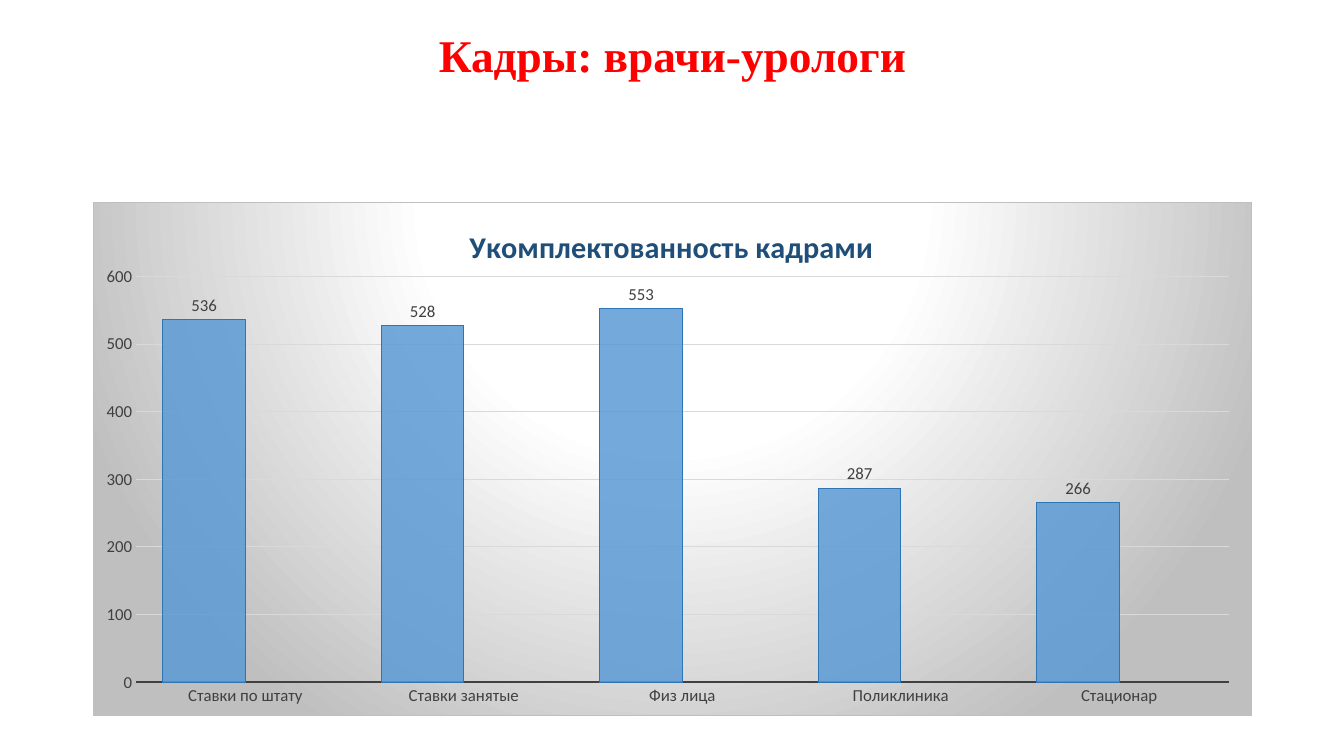
"""Build a slide with a column chart of urologist staffing."""
from lxml import etree
from pptx import Presentation, util as u
from pptx.chart import data
from pptx.dml import color
from pptx.enum import chart as ch, text
from pptx.oxml import ns, parse_xml


def rgb(value):
    return color.RGBColor.from_string(value)


def place(parent, index, **values):
    """Give a chart part a manual layout."""
    for old in parent.findall(ns.qn("c:layout")):
        parent.remove(old)
    layout = etree.Element(ns.qn("c:layout"))
    manual = etree.SubElement(layout, ns.qn("c:manualLayout"))
    for tag, value in values.items():
        etree.SubElement(manual, ns.qn(f"c:{tag}")).set("val", str(value))
    parent.insert(index, layout)


presentation = Presentation()
presentation.slide_width = u.Inches(13.33)
presentation.slide_height = u.Inches(7.5)
slide = presentation.slides.add_slide(presentation.slide_layouts[6])

heading = slide.shapes.add_textbox(u.Inches(0.92), u.Inches(0.4), u.Inches(11.5), u.Inches(1.02))
frame = heading.text_frame
frame.word_wrap = True
frame.margin_top = u.Inches(0.11)
frame.vertical_anchor = text.MSO_ANCHOR.MIDDLE
paragraph = frame.paragraphs[0]
paragraph.alignment = text.PP_ALIGN.CENTER
paragraph.line_spacing = 0.9
run = paragraph.add_run()
run.text = "Кадры: врачи-урологи"
heading_format = {"name": "Times New Roman", "size": u.Pt(32.4), "bold": True}
for name, value in heading_format.items():
    setattr(run.font, name, value)
run.font.color.rgb = rgb("FF0000")
paragraph.add_line_break()
paragraph._p.get_or_add_endParaRPr().set("sz", "4400")

staffing = data.CategoryChartData()
staffing.categories = ["Ставки по штату", "Ставки занятые", "Физ лица", "Поликлиника", "Стационар"]
staffing.add_series("Series 1", [536, 528, 553, 287, 266])
staffing.add_series("Series 2", [None] * 5)
staffing.add_series("Series 3", [])
chart = slide.shapes.add_chart(
    ch.XL_CHART_TYPE.COLUMN_CLUSTERED, u.Inches(0.92), u.Inches(2),
    u.Inches(11.5), u.Inches(5.1), staffing).chart
chart.has_legend = False
chart.font.name = "Calibri"
chart.font.size = u.Pt(12)
chart.font.color.rgb = rgb("404040")

chart.has_title = True
title_run = chart.chart_title.text_frame.paragraphs[0].add_run()
title_run.text = "Укомплектованность кадрами"
title_format = {"name": "Calibri", "size": u.Pt(21.6), "bold": True}
for name, value in title_format.items():
    setattr(title_run.font, name, value)
title_run.font.color.rgb = rgb("1F4E79")
place(chart.chart_title._element, 1, xMode="edge", yMode="edge", x=0.32, y=0.034)
place(chart._chartSpace.chart.plotArea, 0, layoutTarget="inner", xMode="edge", yMode="edge",
      x=0.037, y=0.145, w=0.943, h=0.791)

for axis in (chart.category_axis, chart.value_axis):
    axis.major_tick_mark = ch.XL_TICK_MARK.NONE
    axis.minor_tick_mark = ch.XL_TICK_MARK.NONE
chart.category_axis.format.line.color.rgb = rgb("404040")
chart.category_axis.format.line.width = u.Pt(1.5)
value_axis = chart.value_axis
value_axis_format = {"minimum_scale": 0, "maximum_scale": 600, "major_unit": 100}
for name, value in value_axis_format.items():
    setattr(value_axis, name, value)
value_axis.format.line.fill.background()
value_axis.major_gridlines.format.line.color.rgb = rgb("D9D9D9")
value_axis.major_gridlines.format.line.width = u.Pt(0.75)

plot = chart.plots[0]
plot_format = {"gap_width": 65, "overlap": 0, "vary_by_categories": False}
for name, value in plot_format.items():
    setattr(plot, name, value)
series_colors = [("5B9BD5", "2E75B6"), ("ED7D31", "C55A11"), ("A5A5A5", "7C7C7C")]
for series, (fill, line) in zip(plot.series, series_colors):
    series.format.fill.solid()
    series.format.fill.fore_color.rgb = rgb(fill)
    series.format.line.color.rgb = rgb(line)
    series.format.line.width = u.Pt(0.75)
    solid = series._element.spPr.find(ns.qn("a:solidFill"))
    etree.SubElement(solid[0], ns.qn("a:alpha")).set("val", "85000")
empty_series = plot.series[2]._element
empty_series.remove(empty_series.find(ns.qn("c:val")))
labels = plot.series[0].data_labels
labels.show_value = True
labels.position = ch.XL_LABEL_POSITION.OUTSIDE_END

stops = "".join(f'<a:gs pos="{pos}000"><a:srgbClr val="{shade}"/></a:gs>'
                for pos, shade in [(0, "FFFFFF"), (39, "FFFFFF"), (100, "BFBFBF")])
chart._chartSpace.chart.addnext(parse_xml(
    f'<c:spPr {ns.nsdecls("c", "a")}><a:gradFill><a:gsLst>{stops}</a:gsLst>'
    '<a:path path="circle"><a:fillToRect l="50000" t="-80000" r="50000" b="180000"/></a:path>'
    '</a:gradFill><a:ln w="9525"><a:solidFill><a:srgbClr val="BFBFBF"/></a:solidFill></a:ln></c:spPr>'))

presentation.save("out.pptx")
